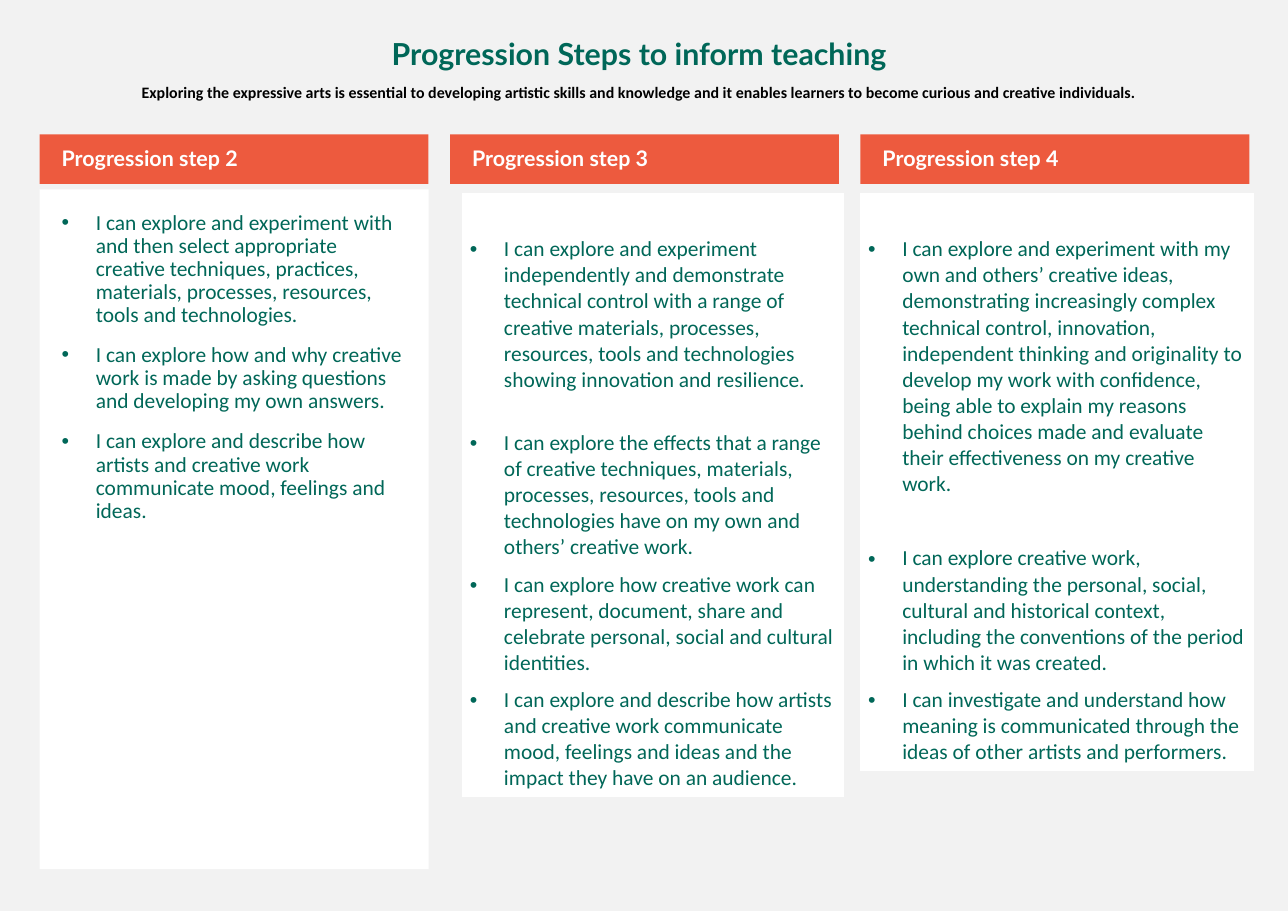
"""Build the slide of progression steps for the expressive arts."""
from lxml.etree import SubElement
from pptx import Presentation
from pptx.dml.color import RGBColor
from pptx.enum.shapes import MSO_SHAPE
from pptx.enum.text import MSO_ANCHOR, MSO_AUTO_SIZE, PP_ALIGN
from pptx.oxml import parse_xml
from pptx.oxml.ns import nsdecls, qn
from pptx.util import Inches, Pt

TITLE = "Progression Steps to inform teaching"
INTRO = ("Exploring the expressive arts is essential to developing artistic skills and knowledge "
         "and it enables learners to become curious and creative individuals.")
HEADS = ["Progression step 2", "Progression step 3", "Progression step 4"]
STEP_TWO = [
    "I can explore and experiment with and then select appropriate creative techniques, "
    "practices, materials, processes, resources, tools and technologies.",
    "I can explore how and why creative work is made by asking questions and developing "
    "my own answers.",
    "I can explore and describe how artists and creative work communicate mood, "
    "feelings and ideas.",
]
STEP_THREE = [
    (1, ""),
    (7, "I can explore and experiment independently and demonstrate technical control with "
        "a range of creative materials, processes, resources, tools and technologies showing "
        "innovation and resilience."),
    (5, "I can explore the effects that a range of creative techniques, materials, processes, "
        "resources, tools and technologies have on my own and others’ creative work."),
    (4, "I can explore how creative work can represent, document, share and celebrate "
        "personal, social and cultural identities."),
    (4, "I can explore and describe how artists and creative work communicate mood, feelings "
        "and ideas and the impact they have on an audience."),
]
STEP_FOUR = [
    (1, ""),
    (10, "I can explore and experiment with my own and others’ creative ideas, demonstrating "
         "increasingly complex technical control, innovation, independent thinking and "
         "originality to develop my work with confidence, being able to explain my reasons "
         "behind choices made and evaluate their effectiveness on my creative work."),
    (1, ""),
    (5, "I can explore creative work, understanding the personal, social, cultural and "
        "historical context, including the conventions of the period in which it was created."),
    (3, "I can investigate and understand how meaning is communicated through the ideas of "
        "other artists and performers."),
]

GREEN = RGBColor(0x00, 0x67, 0x58)
CORAL = RGBColor(0xED, 0x5A, 0x3E)
WHITE = RGBColor(0xFF, 0xFF, 0xFF)
BLACK = RGBColor(0x00, 0x00, 0x00)
GREY = RGBColor(0xF2, 0xF2, 0xF2)

WIDE, HIGH = 11.69, 8.27
LEFT, PITCH, COL = 0.36, 3.725, 3.53
HEAD_TOP, HEAD_HIGH = 1.22, 0.45
LIST_TOP, GRID_TOP = 1.72, 1.76
LINE, PAD = 0.237, 0.05
TABLES = [(1, 0.11, 3.46, STEP_THREE), (2, 0, 3.57, STEP_FOUR)]


def place(shape, left, top, wide, high):
    shape.left, shape.top = Inches(left), Inches(top)
    shape.width, shape.height = Inches(wide), Inches(high)


def fill(item, color):
    item.fill.solid()
    item.fill.fore_color.rgb = color


def inset(item, left, top, right, bottom):
    item.margin_left, item.margin_top = Inches(left), Inches(top)
    item.margin_right, item.margin_bottom = Inches(right), Inches(bottom)


def write(para, text, size, face, color, bold=False, space=None):
    run = para.add_run()
    run.text = text
    font = run.font
    font.size, font.name, font.bold = Pt(size), face, bold
    font.color.rgb = color
    if space:
        para.line_spacing, para.space_before = space, Pt(11)


def bullet(para, text, space=None):
    write(para, text, 14, "Calibri", GREEN, space=space)
    props = para._p.get_or_add_pPr()
    props.set("marL", str(Inches(0.31)))
    props.set("indent", str(-Inches(0.31)))
    SubElement(props, qn("a:buFont")).set("typeface", "Arial")
    SubElement(props, qn("a:buChar")).set("char", "•")


def border(cell):
    props = cell._tc.get_or_add_tcPr()
    for spot, side in enumerate("LRTB"):
        props.insert(spot, parse_xml(
            f'<a:ln{side} {nsdecls("a")} w="9525"><a:solidFill>'
            f'<a:srgbClr val="{WHITE}"/></a:solidFill></a:ln{side}>'))


def add_title(slide):
    title = slide.shapes.title
    place(title, 0.26, 0.36, 11.08, 0.65)
    frame = title.text_frame
    frame.auto_size, frame.vertical_anchor = MSO_AUTO_SIZE.NONE, MSO_ANCHOR.TOP
    head, intro = frame.paragraphs[0], frame.add_paragraph()
    write(head, TITLE, 19.8, "Lato", GREEN, True, 0.7)
    write(intro, INTRO, 10.4, "Calibri", BLACK, True, 0.7)
    head.alignment = intro.alignment = PP_ALIGN.CENTER


def add_list(slide):
    body = slide.placeholders[1]
    place(body, LEFT, LIST_TOP, COL, 6.17)
    fill(body, WHITE)
    frame = body.text_frame
    frame.auto_size, frame.vertical_anchor = MSO_AUTO_SIZE.NONE, MSO_ANCHOR.TOP
    inset(frame, 0.2, 0.2, 0.2, 0.2)
    for i, text in enumerate(STEP_TWO):
        para = frame.add_paragraph() if i else frame.paragraphs[0]
        bullet(para, text, 0.9)


def add_head(slide, col, text):
    bar = slide.shapes.add_shape(
        MSO_SHAPE.RECTANGLE, Inches(LEFT + col * PITCH), Inches(HEAD_TOP),
        Inches(COL), Inches(HEAD_HIGH))
    bar.shadow.inherit = False
    fill(bar, CORAL)
    bar.line.fill.background()
    frame = bar.text_frame
    frame.word_wrap, frame.vertical_anchor = True, MSO_ANCHOR.MIDDLE
    inset(frame, 0.2, 0.05, 0.1, 0.05)
    para = frame.paragraphs[0]
    para.alignment = PP_ALIGN.LEFT
    write(para, text, 14, "Lato", WHITE, True, 0.9)


def add_grid(slide, col, shift, wide, rows):
    highs = [lines * LINE + 2 * PAD for lines, _ in rows]
    table = slide.shapes.add_table(
        len(rows), 1, Inches(LEFT + col * PITCH + shift), Inches(GRID_TOP),
        Inches(wide), Inches(sum(highs))).table
    table.first_row = table.horz_banding = False
    for i, (_, text) in enumerate(rows):
        table.rows[i].height = Inches(highs[i])
        cell = table.cell(i, 0)
        fill(cell, WHITE)
        border(cell)
        if text:
            inset(cell, 0.07, PAD, 0.07, PAD)
            bullet(cell.text_frame.paragraphs[0], text)
        else:
            inset(cell, 0, 0, 0, 0)


def main():
    deck = Presentation()
    deck.slide_width, deck.slide_height = Inches(WIDE), Inches(HIGH)
    slide = deck.slides.add_slide(deck.slide_layouts[1])
    fill(slide.background, GREY)
    add_title(slide)
    add_list(slide)
    for col, text in enumerate(HEADS):
        add_head(slide, col, text)
    for part in TABLES:
        add_grid(slide, *part)
    deck.save("out.pptx")


if __name__ == "__main__":
    main()
